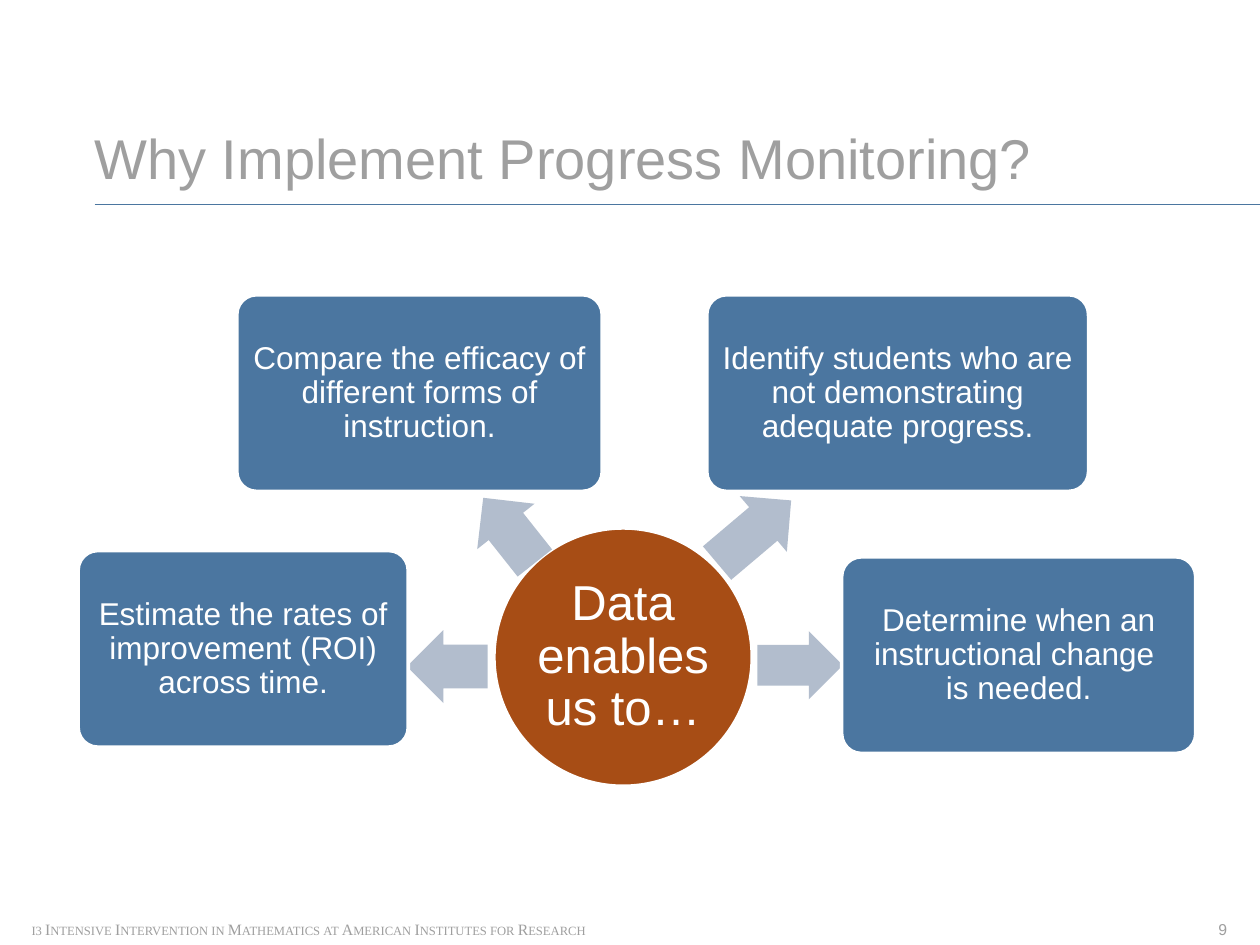
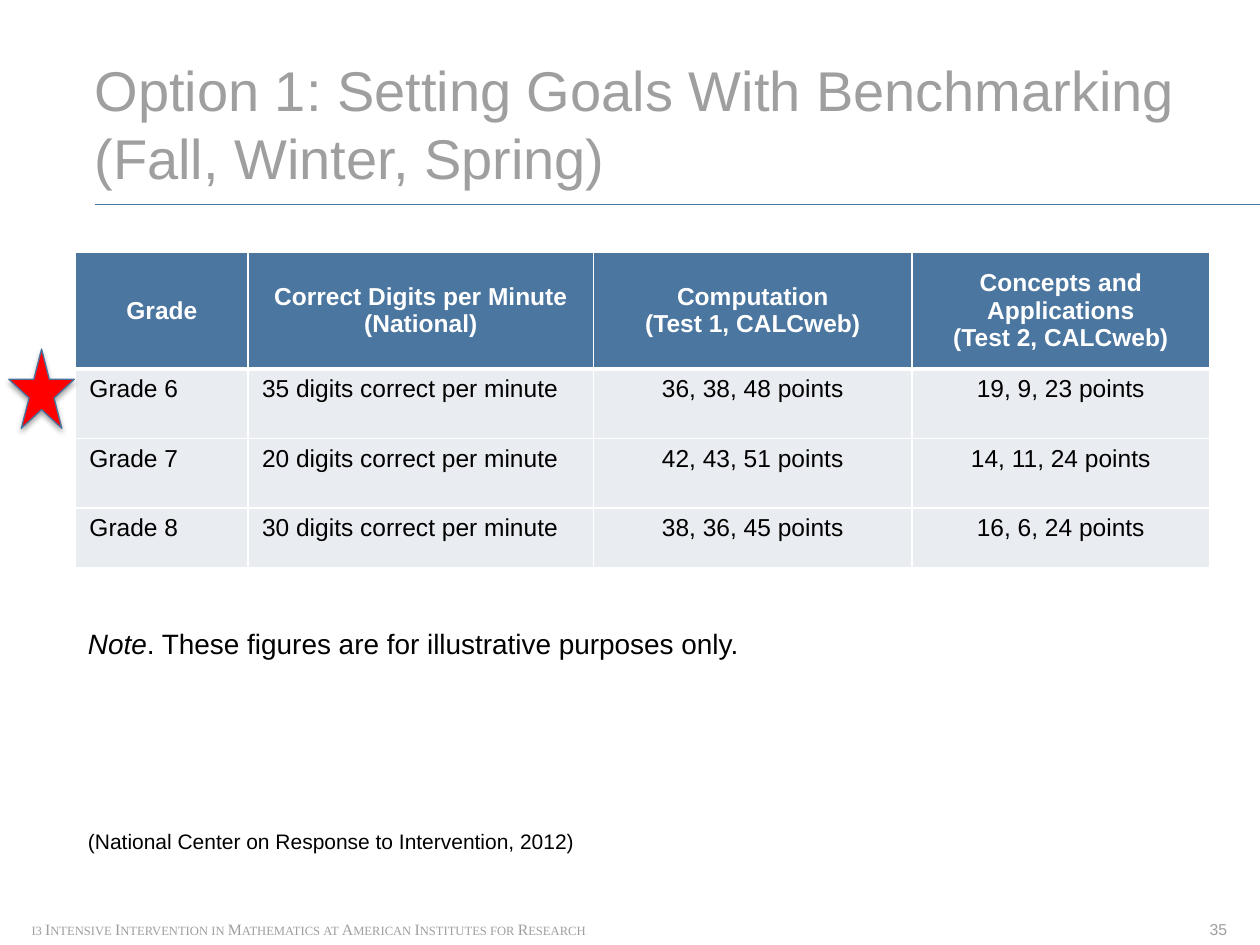
import dataclasses
import pptx
import pptx.util
import pptx.dml.color
import pptx.enum.shapes
import pptx.enum.text
import pptx.oxml
import pptx.oxml.ns

Inches = pptx.util.Inches
Pt = pptx.util.Pt
Shape = pptx.enum.shapes.MSO_SHAPE
Align = pptx.enum.text.PP_ALIGN
Anchor = pptx.enum.text.MSO_ANCHOR
NS = pptx.oxml.ns.nsdecls("a")


@dataclasses.dataclass(frozen=True)
class Theme:
    blue: str = "4B76A0"
    rust: str = "A74D15"
    pale: str = "B2BDCD"
    row: str = "E9ECF0"
    gray: str = "9F9F9F"
    white: str = "FFFFFF"
    black: str = "000000"
    red: str = "FF0000"
    edge: str = "47739F"
    sans: str = "Arial"
    serif: str = "Times New Roman"
    title: float = 32
    hub: float = 28
    card: float = 18
    note: float = 16
    cell: float = 14
    cite: float = 12
    foot: float = 9


T = Theme()


# Shared helpers
def rgb(code):
    return pptx.dml.color.RGBColor.from_string(code)


def place(box, dx, dy, w, h):
    """Lengths for a part set off from the corner of its box."""
    return [Inches(n) for n in (box[0] + dx, box[1] + dy, w, h)]


def style(frame, size, color, face=T.sans, align=None, bold=False):
    for para in frame.paragraphs:
        para.alignment = align
        for run in para.runs:
            font = run.font
            font.name, font.size, font.bold = face, Pt(size), bold
            font.color.rgb = rgb(color)


def pad(frame, side, top):
    frame.margin_left = frame.margin_right = Inches(side)
    frame.margin_top = frame.margin_bottom = Inches(top)


def label(slide, box, text, size, color, **look):
    frame = slide.shapes.add_textbox(*place(box, 0, 0, *box[2:])).text_frame
    frame.word_wrap = True
    frame.text = text
    style(frame, size, color, **look)
    return frame


def draw(slide, kind, spot, fill, line=None, width=2):
    shape = slide.shapes.add_shape(kind, *spot)
    shape.shadow.inherit = False
    shape.fill.solid()
    shape.fill.fore_color.rgb = rgb(fill)
    if line:
        shape.line.color.rgb = rgb(line)
        shape.line.width = Pt(width)
    else:
        shape.line.fill.background()
    return shape


def write(shape, text, size, gap):
    frame = shape.text_frame
    frame.word_wrap = True
    frame.vertical_anchor = Anchor.MIDDLE
    pad(frame, gap, gap)
    frame.text = text
    style(frame, size, T.white, align=Align.CENTER)
    frame.paragraphs[0].line_spacing = 0.9


# Title, rule and footer of every slide
def start(deck, title, page):
    slide = deck.slides.add_slide(deck.slide_layouts[5])
    head = slide.shapes.title
    head.left, head.top, head.width, head.height = place((0.75, 0.97), 0, 0, 8.99, 0.54)
    frame = head.text_frame
    frame.auto_size = pptx.enum.text.MSO_AUTO_SIZE.NONE
    frame.word_wrap = True
    frame.vertical_anchor = Anchor.BOTTOM
    pad(frame, 0, 0)
    frame.text = title
    style(frame, T.title, T.gray, align=Align.LEFT)

    rule = slide.shapes.add_connector(
        pptx.enum.shapes.MSO_CONNECTOR.STRAIGHT,
        Inches(0.75), Inches(1.62), Inches(10), Inches(1.62))
    rule.line.color.rgb = rgb(T.blue)
    rule.line.width = Pt(0.5)
    rule._element.spPr.append(pptx.oxml.parse_xml(f"<a:effectLst {NS}/>"))

    foot = label(slide, (0.25, 7.3, 4.51, 0.15),
                 "i3 Intensive Intervention in Mathematics at American Institutes for Research",
                 T.foot, T.gray, face=T.serif)
    foot.word_wrap = False
    foot.paragraphs[0].runs[0]._r.get_or_add_rPr().set("cap", "small")
    count = label(slide, (9.34, 7.3, 0.4, 0.15), str(page), T.foot, T.gray, align=Align.RIGHT)
    for frame in (foot, count):
        pad(frame, 0, 0)
    return slide


# Hub with arrows out to four cards
def wheel(slide, box):
    hub = draw(slide, Shape.OVAL, place(box, 3.3, 1.85, 2.05, 2.05), T.rust, T.white)
    write(hub, "Data enables us to…", T.hub, 0.02)
    # Each row: arrow place and turn, then card place, width and text
    spokes = [
        ((2.61, 2.66, 0.64, 0.58), 0, (0, 2.03), 2.62,
         "Estimate the rates of improvement (ROI) across time."),
        ((3.09, 1.58, 0.66, 0.58), 51.6, (1.26, 0), 2.9,
         "Compare the efficacy of different forms of instruction."),
        ((4.98, 1.59, 0.77, 0.58), 139.8, (4.99, 0), 3.03,
         "Identify students who are not demonstrating adequate progress."),
        ((5.39, 2.67, 0.68, 0.54), 180, (6.06, 2.08), 2.81,
         "Determine when an instructional change \vis needed."),
    ]
    for spot, turn, corner, width, text in spokes:
        arrow = draw(slide, Shape.LEFT_ARROW, place(box, *spot), T.pale)
        arrow.adjustments[0], arrow.adjustments[1] = 0.6, 0.5
        arrow.rotation = turn
        card = draw(slide, Shape.ROUNDED_RECTANGLE, place(box, *corner, width, 1.56),
                    T.blue, T.white)
        card.adjustments[0] = 0.1
        write(card, text, T.card, 0.04)


# Table of goals
def border(cell, head):
    props = cell._tc.get_or_add_tcPr()
    for spot, side in enumerate("LRTB"):
        width = Pt(3 if head and side == "B" else 1)
        props.insert(spot, pptx.oxml.parse_xml(
            f'<a:ln{side} {NS} w="{width}"><a:solidFill>'
            f'<a:srgbClr val="{T.white}"/></a:solidFill></a:ln{side}>'))


def goals(slide, box):
    rows = [
        ("Grade", "Correct Digits per Minute (National)",
         "Computation\n(Test 1, CALCweb)",
         "Concepts and\nApplications\n(Test 2, CALCweb)"),
        ("Grade 6", "35 digits correct per minute", "36, 38, 48 points", "19, 9, 23 points"),
        ("Grade 7", "20 digits correct per minute", "42, 43, 51 points", "14, 11, 24 points"),
        ("Grade 8", "30 digits correct per minute", "38, 36, 45 points", "16, 6, 24 points"),
    ]
    table = slide.shapes.add_table(len(rows), 4, *place(box, 0, 0, *box[2:])).table
    table.horz_banding = False
    for col, width in zip(table.columns, (1.37, 2.74, 2.53, 2.36)):
        col.width = Inches(width)
    for row, height in zip(table.rows, (0.93, 0.55, 0.55, 0.48)):
        row.height = Inches(height)
    for r, texts in enumerate(rows):
        head = r == 0
        for c, text in enumerate(texts):
            cell = table.cell(r, c)
            cell.fill.solid()
            cell.fill.fore_color.rgb = rgb(T.blue if head else T.row)
            cell.vertical_anchor = Anchor.MIDDLE if head else Anchor.TOP
            pad(cell, 0.11, 0.05)
            cell.text_frame.text = text
            style(cell.text_frame, T.cell, T.white if head else T.black, bold=head,
                  align=Align.CENTER if head or c > 1 else Align.LEFT)
            border(cell, head)


# Star that marks a row
def star(slide, box):
    mark = draw(slide, Shape.STAR_5_POINT, place(box, 0, 0, *box[2:]), T.red, T.edge, 0.75)
    glow = mark._element.spPr.find(pptx.oxml.ns.qn("a:effectLst"))
    glow.append(pptx.oxml.parse_xml(
        f'<a:outerShdw {NS} blurRad="{Pt(3.1)}" dist="{Pt(1.8)}" dir="5400000" '
        f'rotWithShape="0"><a:srgbClr val="{T.black}"><a:alpha val="35000"/>'
        '</a:srgbClr></a:outerShdw>'))


# Note and source below the table
def notes(slide, box):
    x, y, w, h = box
    label(slide, (x, y + h - 0.3, 4.6, 0.3),
          "(National Center on Response to Intervention, 2012)", T.cite, T.black)
    frame = label(slide, (x, y, w, 0.37), "Note", T.note, T.black)
    para = frame.paragraphs[0]
    para.add_run().text = ". These figures are for illustrative purposes only."
    style(frame, T.note, T.black)
    para.runs[0].font.italic = True


def main():
    deck = pptx.Presentation()
    deck.slide_width, deck.slide_height = Inches(10), Inches(7.5)

    slide = start(deck, "Why Implement Progress Monitoring?", 9)
    wheel(slide, (0.62, 2.34, 8.87, 3.9))

    slide = start(deck, "Option 1: Setting Goals With Benchmarking (Fall, Winter, Spring)", 35)
    goals(slide, (0.6, 2, 9, 2.51))
    notes(slide, (0.6, 4.92, 6.57, 1.91))
    star(slide, (0.07, 2.77, 0.52, 0.63))

    deck.save("out.pptx")


if __name__ == "__main__":
    main()
